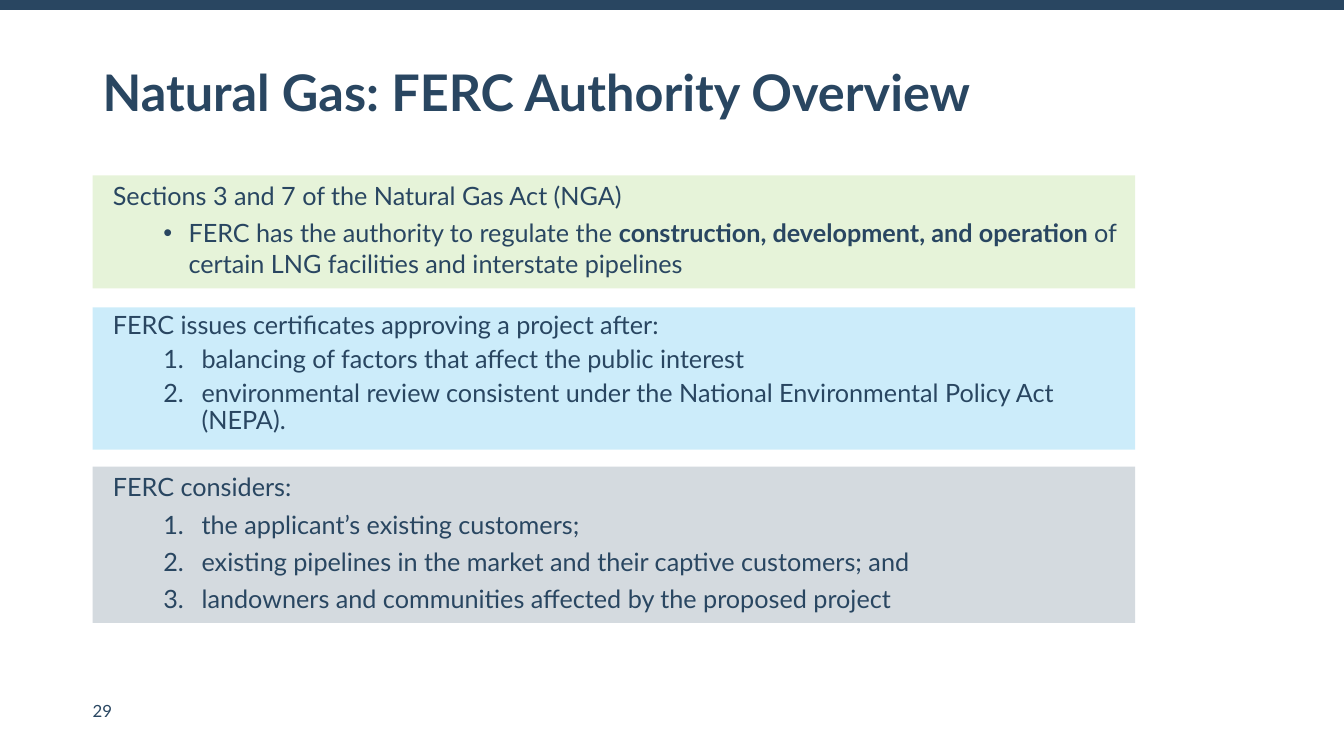
"""Build the slide on FERC authority over natural gas."""
from lxml import etree
from pptx import Presentation, util as u
from pptx.dml.color import RGBColor
from pptx.enum import shapes, text
from pptx.oxml import ns

PX = 9144
NAVY = RGBColor(0x29, 0x46, 0x61)
GREEN = RGBColor(0x85, 0xC4, 0x41)
BLUE = RGBColor(0x00, 0xA4, 0xE7)
LEFT, WIDE = 92, 1034


def style(run, size, bold=False):
    run.font.name = "Lato"
    run.font.size = u.Pt(size)
    run.font.bold = bold
    run.font.color.rgb = NAVY


def label(words, size, bold, box, inset, anchor):
    frame = slide.shapes.add_textbox(*[n * PX for n in box]).text_frame
    frame.word_wrap = True
    frame.vertical_anchor = anchor
    frame.margin_left = frame.margin_right = inset * 2 * PX
    frame.margin_top = frame.margin_bottom = inset * PX
    frame.text = words
    frame.paragraphs[0].line_spacing = 0.9 if bold else 1.0
    style(frame.paragraphs[0].runs[0], size, bold)


deck = Presentation()
deck.slide_width, deck.slide_height = 1333 * PX, 750 * PX
slide = deck.slides.add_slide(deck.slide_layouts[6])

band = slide.shapes.add_connector(
    shapes.MSO_CONNECTOR.STRAIGHT, 0, 5 * PX, 1333 * PX, 5 * PX)
band.line.color.rgb = NAVY
band.line.width = u.Pt(7.75)
etree.SubElement(band._element.spPr, ns.qn("a:effectLst"))

label("29", 12, False, (LEFT, 695, 24, 20), 0, text.MSO_ANCHOR.BOTTOM)
label("Natural Gas: FERC Authority Overview", 36, True,
      (LEFT, 22, 1150, 145), 5, text.MSO_ANCHOR.MIDDLE)

DOT = ("buChar", {"char": "•"}, 75, 25)
NUM = ("buAutoNum", {"type": "arabicPeriod"}, 88, 38)
panels = [
    (174, 112, GREEN, 1.0, DOT, "Sections 3 and 7 of the Natural Gas Act (NGA)", [
        ["FERC has the authority to regulate the ",
         "construction, development, and operation ",
         "of certain LNG facilities and interstate pipelines"]]),
    (305, 141, BLUE, 0.9, NUM, "FERC issues certificates approving a project after:", [
        ["balancing of factors that affect the public interest"],
        ["environmental review consistent under the National "
         "Environmental Policy Act (NEPA)."]]),
    (463, 155, NAVY, 1.0, NUM, "FERC considers:", [
        ["the applicant’s existing customers;"],
        ["existing pipelines in the market and their captive customers; and"],
        ["landowners and communities affected by the proposed project"]]),
]

for top, high, color, space, mark, head, items in panels:
    panel = slide.shapes.add_shape(
        shapes.MSO_SHAPE.RECTANGLE, LEFT * PX, top * PX, WIDE * PX, high * PX)
    panel.shadow.inherit = False
    panel.line.fill.background()
    panel.fill.solid()
    panel.fill.fore_color.rgb = color
    tint = panel._element.spPr.find(".//" + ns.qn("a:srgbClr"))
    etree.SubElement(tint, ns.qn("a:alpha"), val="20000")

    frame = panel.text_frame
    frame.word_wrap = True
    frame.vertical_anchor = text.MSO_ANCHOR.TOP
    frame.margin_left = 20 * PX
    frame.margin_right = frame.margin_top = frame.margin_bottom = 5 * PX
    tag, attrs, indent, hang = mark
    for row, parts in enumerate([[head]] + items):
        para = frame.add_paragraph() if row else frame.paragraphs[0]
        para.alignment = text.PP_ALIGN.LEFT
        para.line_spacing = space
        if row:
            para.level = 1
            para.space_before = u.Pt(5)
            props = para._p.get_or_add_pPr()
            props.set("marL", str(indent * PX))
            props.set("indent", str(-hang * PX))
            if tag == "buChar":
                etree.SubElement(props, ns.qn("a:buFont"), typeface="Arial")
            etree.SubElement(props, ns.qn("a:" + tag), attrs)
        for spot, part in enumerate(parts):
            run = para.add_run()
            run.text = part
            style(run, 18, spot == 1)

deck.save("out.pptx")
